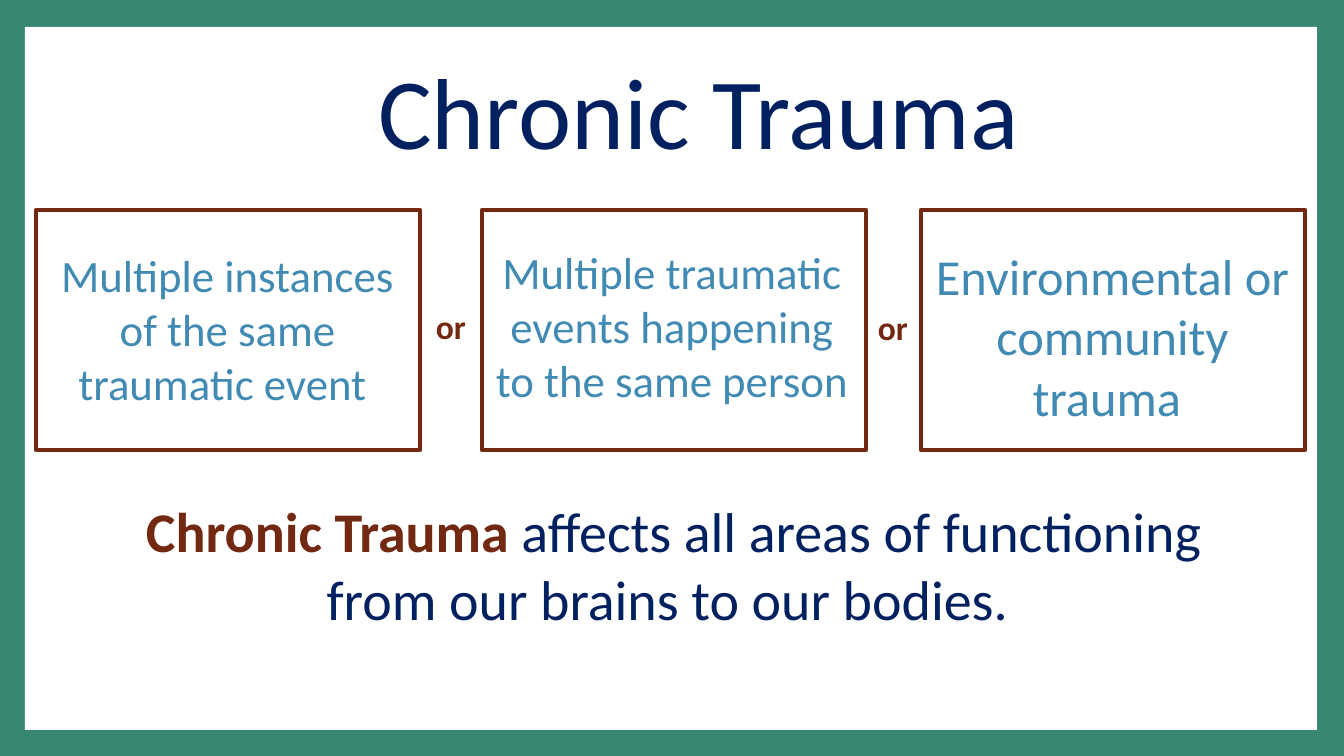
from pptx import Presentation
from pptx.dml.color import RGBColor
from pptx.enum.shapes import MSO_SHAPE
from pptx.enum.text import MSO_ANCHOR, PP_ALIGN
from pptx.util import Pt

PX = 9144000 / 1008  # EMU per px, 100.8 px to the inch
FONT = "Calibri"
GREEN, WHITE, NAVY, BLUE, BROWN = "388773", "FFFFFF", "002060", "418AB3", "722811"

SLIDE_SIZE = (1344, 756)
PANEL = (25, 27, 1292, 703)
TITLE = ("Chronic Trauma", (154, 42, 1089, 149))

FRAME_TOP, FRAME_WIDTH, FRAME_HEIGHT = 210, 384, 240
# frame left, text, text size, text area
KINDS = [
    (36, "Multiple instances of the same traumatic event ", 32, (34, 243, 387, 173)),
    (482, "Multiple traumatic events happening to the same person", 32, (480, 240, 384, 173)),
    (921, "Environmental or community trauma ", 36, (922, 240, 381, 194)),
]
JOINERS = [("or", (426, 301, 51, 50)), ("or", (868, 302, 51, 50))]
EFFECT = [
    ("Chronic Trauma ", BROWN, True),
    ("affects all areas of functioning from our brains to our bodies. ", NAVY, False),
]
EFFECT_AREA = (115, 492, 1117, 146)


def emu(lengths):
    return [round(length * PX) for length in lengths]


def color(hex_string):
    return RGBColor.from_string(hex_string)


def add_runs(paragraph, runs, size):
    """Add (text, colour, bold) runs to the paragraph."""
    for text, hex_string, bold in runs:
        run = paragraph.add_run()
        run.text = text
        run.font.name = FONT
        run.font.size = Pt(size)
        run.font.bold = bold
        run.font.color.rgb = color(hex_string)


def add_text(slide, area, runs, size, align=PP_ALIGN.CENTER, wrap=True):
    frame = slide.shapes.add_textbox(*emu(area)).text_frame
    frame.word_wrap = wrap
    frame.paragraphs[0].alignment = align
    add_runs(frame.paragraphs[0], runs, size)


def add_rectangle(slide, area, fill=None, line=None):
    rectangle = slide.shapes.add_shape(MSO_SHAPE.RECTANGLE, *emu(area))
    rectangle.shadow.inherit = False
    if fill:
        rectangle.fill.solid()
        rectangle.fill.fore_color.rgb = color(fill)
    else:
        rectangle.fill.background()
    if line:
        rectangle.line.color.rgb = color(line)
        rectangle.line.width = Pt(3.25)
    else:
        rectangle.line.fill.background()
    return rectangle


def set_title(slide):
    text, area = TITLE
    title = slide.shapes.title
    title.left, title.top, title.width, title.height = emu(area)
    title.text_frame.vertical_anchor = MSO_ANCHOR.MIDDLE
    paragraph = title.text_frame.paragraphs[0]
    paragraph.alignment = PP_ALIGN.CENTER
    paragraph.line_spacing = 0.9
    add_runs(paragraph, [(text, NAVY, False)], 72)


def main():
    deck = Presentation()
    deck.slide_width, deck.slide_height = emu(SLIDE_SIZE)
    slide = deck.slides.add_slide(deck.slide_layouts[5])
    slide.background.fill.solid()
    slide.background.fill.fore_color.rgb = color(GREEN)

    panel = add_rectangle(slide, PANEL, fill=WHITE)
    slide.shapes.title._element.addprevious(panel._element)  # behind the title
    set_title(slide)

    for left, text, size, area in KINDS:
        add_rectangle(slide, (left, FRAME_TOP, FRAME_WIDTH, FRAME_HEIGHT), line=BROWN)
        add_text(slide, area, [(text, BLUE, False)], size)
    for text, area in JOINERS:
        add_text(slide, area, [(text, BROWN, True)], 24, PP_ALIGN.LEFT, wrap=False)
    add_text(slide, EFFECT_AREA, EFFECT, 40)

    deck.save("out.pptx")


if __name__ == "__main__":
    main()
